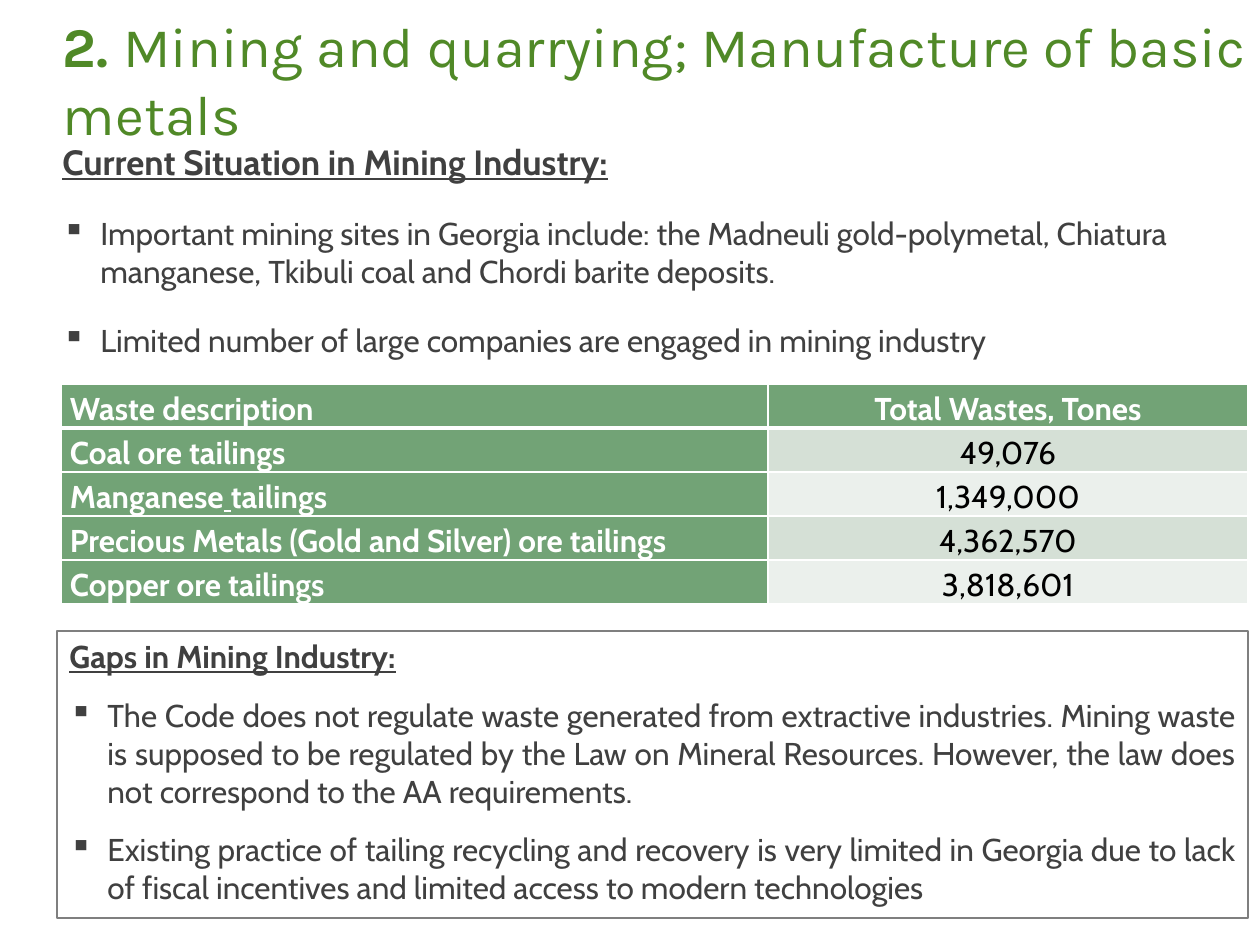
import pptx
import pptx.util
import pptx.dml.color
import pptx.enum.shapes
import pptx.enum.text
import pptx.oxml.ns
import lxml.etree

Pt = pptx.util.Pt
RGB = pptx.dml.color.RGBColor
Align = pptx.enum.text.PP_ALIGN
Anchor = pptx.enum.text.MSO_ANCHOR
qn = pptx.oxml.ns.qn

PX = 914400 // 126
WHITE = RGB(0xFF, 0xFF, 0xFF)
BLACK = RGB(0, 0, 0)
DARK = RGB(0x40, 0x40, 0x40)
GREY = RGB(0x7F, 0x7F, 0x7F)
LEAF = RGB(0x50, 0x89, 0x27)
GREEN = RGB(0x72, 0xA3, 0x76)
BANDS = [RGB(0xD5, 0xE0, 0xD6), RGB(0xEB, 0xF0, 0xEC)]

SITES = [
    "Important mining sites in Georgia include: the Madneuli gold-polymetal, "
    "Chiatura manganese, Tkibuli coal and Chordi barite deposits.",
    "Limited number of large companies are engaged in mining industry",
]
GAPS = [
    "The Code does not regulate waste generated from extractive industries. "
    "Mining waste is supposed to be regulated by the Law on Mineral Resources. "
    "However, the law does not correspond to the AA requirements.",
    "Existing practice of tailing recycling and recovery is very limited in "
    "Georgia due to lack of fiscal incentives and limited access to modern "
    "technologies",
]
# Each label is a list of its runs; a lone space is underlined.
WASTES = [
    (["Waste description"], "Total Wastes, Tones"),
    (["Coal ore tailings"], "49,076"),
    (["Manganese", " ", "tailings"], "1,349,000"),
    (["Precious Metals (Gold and Silver) ore tailings"], "4,362,570"),
    (["Copper ore tailings"], "3,818,601"),
]


def scale(box):
    return [n * PX for n in box]


def style(run, size, color, bold=False, line=False, face="Cabin"):
    font = run.font
    font.name, font.size, font.bold = face, Pt(size), bold
    font.underline = line
    font.color.rgb = color


def bullet(para):
    props = para._p.get_or_add_pPr()
    props.set("marL", str(38 * PX))
    props.set("indent", str(-38 * PX))
    mark = lxml.etree.SubElement(props, qn("a:buChar"))
    mark.set("char", "▪")


def fill_list(frame, head, size, items, after, align):
    """Write an underlined heading and its bulleted items."""
    frame.word_wrap = True
    frame.text = "\n".join([head] + items)
    for i, para in enumerate(frame.paragraphs):
        para.space_before, para.space_after = Pt(6), Pt(after)
        para.alignment = align if i else Align.LEFT
        if i:
            bullet(para)
            style(para.runs[0], 18, DARK)
        else:
            style(para.runs[0], size, DARK, True, True)


def add_title(slide, box):
    frame = slide.shapes.add_textbox(*scale(box)).text_frame
    frame.word_wrap = True
    frame.margin_left, frame.margin_top = 63 * PX, 13 * PX
    para = frame.paragraphs[0]
    for text, bold in [("2. ", True),
                       ("Mining and quarrying; Manufacture of basic metals", False)]:
        run = para.add_run()
        run.text = text
        style(run, 32, LEAF, bold, face="Karla")


def add_body(slide, box):
    frame = slide.shapes.add_textbox(*scale(box)).text_frame
    fill_list(frame, "Current Situation in Mining Industry:", 20, SITES, 12, Align.LEFT)


def add_gaps(slide, box):
    kind = pptx.enum.shapes.MSO_SHAPE.RECTANGLE
    panel = slide.shapes.add_shape(kind, *scale(box))
    panel.shadow.inherit = False
    panel.fill.background()
    panel.line.color.rgb = GREY
    panel.line.width = Pt(0.75)
    panel.text_frame.vertical_anchor = Anchor.TOP
    fill_list(panel.text_frame, "Gaps in Mining Industry:", 18, GAPS, 6, Align.JUSTIFY)


def edge(cell, row):
    """Give the cell white borders, thick below the header row."""
    props = cell._tc.get_or_add_tcPr()
    thick = {"T": row == 1, "B": row == 0}
    for i, side in enumerate("LRTB"):
        line = lxml.etree.Element(qn("a:ln" + side))
        line.set("w", str(Pt(3 if thick.get(side) else 1)))
        solid = lxml.etree.SubElement(line, qn("a:solidFill"))
        lxml.etree.SubElement(solid, qn("a:srgbClr")).set("val", str(WHITE))
        props.insert(i, line)


def fill_cell(cell, parts, row, color, back, bold, align):
    cell.margin_left = cell.margin_right = 9 * PX
    cell.margin_top = cell.margin_bottom = 0
    cell.vertical_anchor = Anchor.MIDDLE
    cell.fill.solid()
    cell.fill.fore_color.rgb = back
    edge(cell, row)
    para = cell.text_frame.paragraphs[0]
    para.alignment, para.line_spacing = align, 1.15
    para.space_before = para.space_after = Pt(2)
    for part in parts:
        run = para.add_run()
        run.text = part
        style(run, 18, color, bold, part == " ")


def add_wastes(slide, box):
    table = slide.shapes.add_table(len(WASTES), 2, *scale(box)).table
    table.first_row = table.horz_banding = False
    first = 707
    table.columns[0].width = first * PX
    table.columns[1].width = (box[2] - first) * PX
    for i, (label, total) in enumerate(WASTES):
        head = i == 0
        fill_cell(table.cell(i, 0), label, i, WHITE, GREEN, True,
                  Align.JUSTIFY if head else Align.LEFT)
        fill_cell(table.cell(i, 1), [total], i, WHITE if head else BLACK,
                  GREEN if head else BANDS[(i - 1) % 2], head, Align.CENTER)


def main():
    deck = pptx.Presentation()
    deck.slide_width, deck.slide_height = scale((1260, 945))
    slide = deck.slides.add_slide(deck.slide_layouts[6])
    add_body(slide, (50, 134, 1197, 475))
    add_title(slide, (0, -1, 1260, 100))
    add_gaps(slide, (57, 631, 1191, 287))
    add_wastes(slide, (61, 384, 1187, 220))
    deck.save("out.pptx")


if __name__ == "__main__":
    main()
